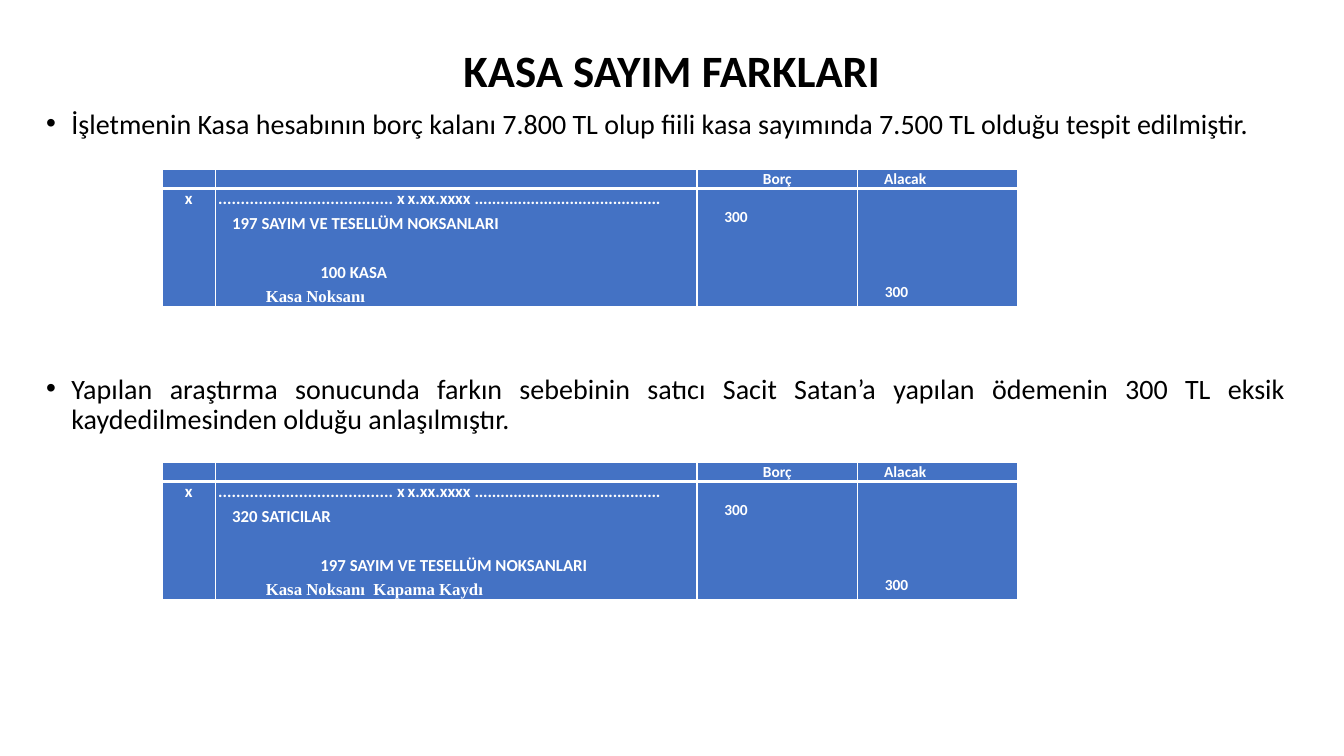
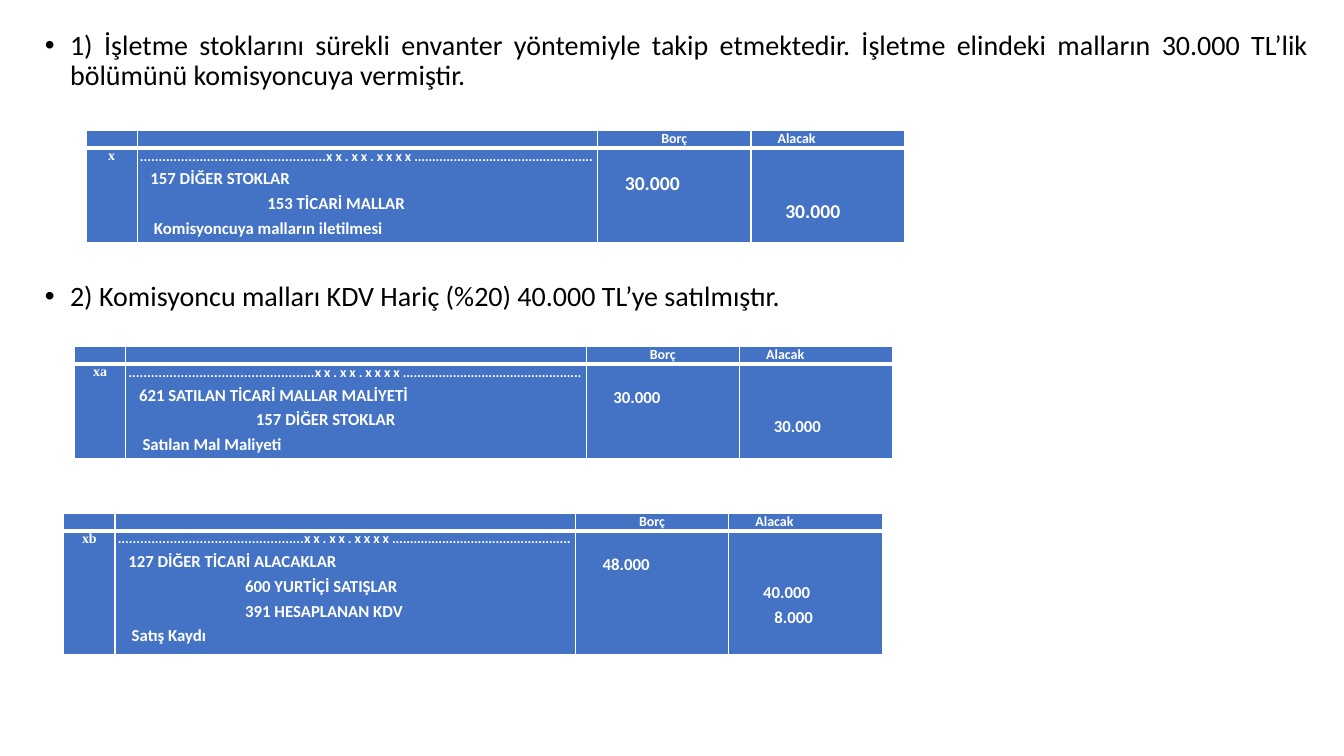
from dataclasses import dataclass

import lxml.etree
import pptx
import pptx.dml.color
import pptx.enum.text
import pptx.oxml.ns
import pptx.util

Pt = pptx.util.Pt
ALIGN = pptx.enum.text.PP_ALIGN
ANCHOR = pptx.enum.text.MSO_ANCHOR
qn = pptx.oxml.ns.qn

WIDTH = pptx.util.Inches(13.33)
HEIGHT = pptx.util.Inches(7.5)
GRID = 100
COLORS = {"ink": "000000", "ledger": "4472C4", "light": "FFFFFF"}
SANS = "Calibri"
SERIF = "Times New Roman"
COLUMN_WEIGHTS = (1, 9, 3, 3)
ENTRY_SIZE = 12
BULLET_INDENT = Pt(18)


@dataclass
class LedgerStyle:
    width: float
    header_rows: float
    header_size: int
    marker_font: str
    marker_size: int
    date_line: tuple
    debit_indent: float
    debit_drop: float
    credit_indent: float
    credit_drop: float


@dataclass
class Line:
    text: str
    indent: float
    font: str = SANS
    before: float = 3


CASH_STYLE = LedgerStyle(
    width=63.7, header_rows=2.5, header_size=11,
    marker_font=SANS, marker_size=12,
    date_line=(("." * 39 + " ", 0), ("x", 2.1), ("x.xx.xxxx ", 0), ("." * 43, -0.1)),
    debit_indent=19.5, debit_drop=13.4, credit_indent=19.5, credit_drop=67)

STOCK_STYLE = LedgerStyle(
    width=60.9, header_rows=2.3, header_size=10,
    marker_font=SERIF, marker_size=10,
    date_line=(("." * 50, 0), ("xx.xx.xxxx", 2.1), ("." * 50, -0.1)),
    debit_indent=19.5, debit_drop=17.1, credit_indent=24.5, credit_drop=37.2)


def across(columns):
    return round(WIDTH * columns / GRID)


def down(rows):
    return round(HEIGHT * rows / GRID)


def style_font(paragraph, size, color, name=SANS, bold=False):
    font = paragraph.font
    font.size = Pt(size)
    font.name = name
    font.bold = bold
    font.color.rgb = pptx.dml.color.RGBColor.from_string(COLORS[color])


def add_text(slide, left, top, width, height):
    frame = slide.shapes.add_textbox(
        across(left), down(top), across(width), down(height)).text_frame
    frame.word_wrap = True
    paragraph = frame.paragraphs[0]
    paragraph.line_spacing = 0.9
    return frame, paragraph


def add_title(slide, text):
    frame, title = add_text(slide, 6.9, 5.33, 86.2, 8.53)
    frame.vertical_anchor = ANCHOR.MIDDLE
    title.text = text
    title.alignment = ALIGN.CENTER
    style_font(title, 32, "ink", bold=True)


def add_bullet(slide, left, top, width, text):
    _, bullet = add_text(slide, left, top, width, 10)
    bullet.text = text
    bullet.alignment = ALIGN.JUSTIFY
    properties = bullet._p.get_or_add_pPr()
    properties.set("marL", str(BULLET_INDENT))
    properties.set("indent", str(-BULLET_INDENT))
    lxml.etree.SubElement(properties, qn("a:buFont")).set("typeface", "Arial")
    lxml.etree.SubElement(properties, qn("a:buChar")).set("char", "•")
    style_font(bullet, 20, "ink")


def add_border(cell, side, points):
    border = lxml.etree.SubElement(cell._tc.get_or_add_tcPr(), qn("a:" + side))
    border.set("w", str(Pt(points)))
    fill = lxml.etree.SubElement(border, qn("a:solidFill"))
    lxml.etree.SubElement(fill, qn("a:srgbClr")).set("val", COLORS["light"])


def style_cell(cell, is_header):
    cell.margin_left = cell.margin_right = 0
    cell.margin_top = cell.margin_bottom = 0
    add_border(cell, "lnL", 1)
    add_border(cell, "lnR", 1)
    add_border(cell, "lnT", 1 if is_header else 3)
    add_border(cell, "lnB", 3 if is_header else 1)
    cell.fill.solid()
    cell.fill.fore_color.rgb = pptx.dml.color.RGBColor.from_string(COLORS["ledger"])


def write_lines(cell, lines, size, alignment=ALIGN.LEFT):
    frame = cell.text_frame
    for index, line in enumerate(lines):
        paragraph = frame.add_paragraph() if index else frame.paragraphs[0]
        paragraph.text = line.text
        paragraph.alignment = alignment
        paragraph.space_before = Pt(line.before if index else 0)
        paragraph._p.get_or_add_pPr().set("marL", str(Pt(line.indent)))
        style_font(paragraph, size, "light", line.font, bold=True)


def write_date_line(cell, pieces, size):
    date_line = cell.text_frame.paragraphs[0]
    date_line._p.get_or_add_pPr().set("marL", str(Pt(2)))
    style_font(date_line, size, "light", bold=True)
    for text, spacing in pieces:
        run = date_line.add_run()
        run.text = text
        run._r.get_or_add_rPr().set("spc", str(round(spacing * 100)))


def write_entries(cell, entries):
    for entry in entries:
        paragraph = cell.text_frame.add_paragraph()
        paragraph.text = entry.text
        paragraph.space_before = Pt(entry.before)
        paragraph._p.get_or_add_pPr().set("marL", str(Pt(entry.indent)))
        style_font(paragraph, ENTRY_SIZE, "light", entry.font, bold=True)


def write_amounts(cell, lines, size, drop):
    cell.margin_top = Pt(drop)
    write_lines(cell, lines, size)


def write_empty(cell, size):
    end = lxml.etree.SubElement(cell.text_frame.paragraphs[0]._p, qn("a:endParaRPr"))
    end.set("sz", str(size * 100))


def add_ledger(slide, style, left, top, body_rows, marker, entries,
               debit, credits, amount_size):
    table = slide.shapes.add_table(
        2, len(COLUMN_WEIGHTS), across(left), down(top), across(style.width),
        down(style.header_rows + body_rows)).table
    for column, weight in zip(table.columns, COLUMN_WEIGHTS):
        column.width = across(style.width * weight / sum(COLUMN_WEIGHTS))
    for row, rows in zip(table.rows, (style.header_rows, body_rows)):
        row.height = down(rows)
    for row_index in range(2):
        for column_index in range(len(COLUMN_WEIGHTS)):
            style_cell(table.cell(row_index, column_index), row_index == 0)

    for column_index in range(2):
        write_empty(table.cell(0, column_index), style.header_size)
    write_lines(table.cell(0, 2), [Line("Borç", 0)], style.header_size, ALIGN.CENTER)
    write_lines(table.cell(0, 3), [Line("Alacak", 19)], style.header_size)

    write_lines(table.cell(1, 0), [Line(marker, 0, style.marker_font)],
                style.marker_size, ALIGN.CENTER)
    write_date_line(table.cell(1, 1), style.date_line, style.marker_size)
    write_entries(table.cell(1, 1), entries)
    write_amounts(table.cell(1, 2), [Line(debit, style.debit_indent)],
                  amount_size, style.debit_drop)
    write_amounts(table.cell(1, 3),
                  [Line(text, style.credit_indent + shift) for text, shift in credits],
                  amount_size, style.credit_drop)


def add_cash_ledger(slide, top, debit_account, credit_account, note):
    entries = [Line(debit_account, 12), Line(credit_account, 75, before=20.6),
               Line(note, 36, SERIF)]
    add_ledger(slide, CASH_STYLE, 12.05, top, 15.5, "x", entries,
               "300", [("300", 0)], 11)


def add_stock_ledger(slide, left, top, body_rows, marker, debit_account,
                     credit_accounts, note, debit, credits, amount_size=12):
    entries = [Line(debit_account, 9.5)]
    entries += [Line(account, 93) for account in credit_accounts]
    entries.append(Line(note, 12))
    add_ledger(slide, STOCK_STYLE, left, top, body_rows, marker, entries,
               debit, credits, amount_size)


def build_cash_slide(slide):
    add_title(slide, "KASA SAYIM FARKLARI")
    add_bullet(slide, 2.7, 13.87, 93.7,
               "İşletmenin Kasa hesabının borç kalanı 7.800 TL olup fiili kasa "
               "sayımında 7.500 TL olduğu tespit edilmiştir.")
    add_cash_ledger(slide, 22.45, "197 SAYIM VE TESELLÜM NOKSANLARI", "100 KASA",
                    "Kasa Noksanı")
    add_bullet(slide, 2.7, 48.93, 93.7,
               "Yapılan araştırma sonucunda farkın sebebinin satıcı Sacit Satan’a "
               "yapılan ödemenin 300 TL eksik kaydedilmesinden olduğu anlaşılmıştır.")
    add_cash_ledger(slide, 61.2, "320 SATICILAR", "197 SAYIM VE TESELLÜM NOKSANLARI",
                    "Kasa Noksanı  Kapama Kaydı")


def build_stock_slide(slide):
    add_bullet(slide, 2.6, 3.47, 95.5,
               "1) İşletme stoklarını sürekli envanter yöntemiyle takip etmektedir. "
               "İşletme elindeki malların 30.000 TL’lik bölümünü komisyoncuya vermiştir.")
    add_stock_ledger(slide, 6.4, 17.25, 12.5, "x", "157 DİĞER STOKLAR",
                     ["153 TİCARİ MALLAR"], "Komisyoncuya malların iletilmesi",
                     "30.000", [("30.000", 0)], amount_size=14)
    add_bullet(slide, 2.6, 36.67, 95.5,
               "2) Komisyoncu malları KDV Hariç (%20) 40.000 TL’ye satılmıştır.")
    add_stock_ledger(slide, 5.55, 45.85, 12.5, "xa",
                     "621 SATILAN TİCARİ MALLAR MALİYETİ",
                     ["157 DİĞER STOKLAR"], "Satılan Mal Maliyeti",
                     "30.000", [("30.000", 0)])
    add_stock_ledger(slide, 4.75, 67.9, 16.4, "xb", "127 DİĞER TİCARİ ALACAKLAR",
                     ["600 YURTİÇİ SATIŞLAR", "391 HESAPLANAN KDV"], "Satış Kaydı",
                     "48.000", [("40.000", 0), ("8.000", 8)])


def main():
    presentation = pptx.Presentation()
    presentation.slide_width = WIDTH
    presentation.slide_height = HEIGHT
    blank = presentation.slide_layouts[6]
    for build in (build_cash_slide, build_stock_slide):
        build(presentation.slides.add_slide(blank))
    presentation.save("out.pptx")


if __name__ == "__main__":
    main()
